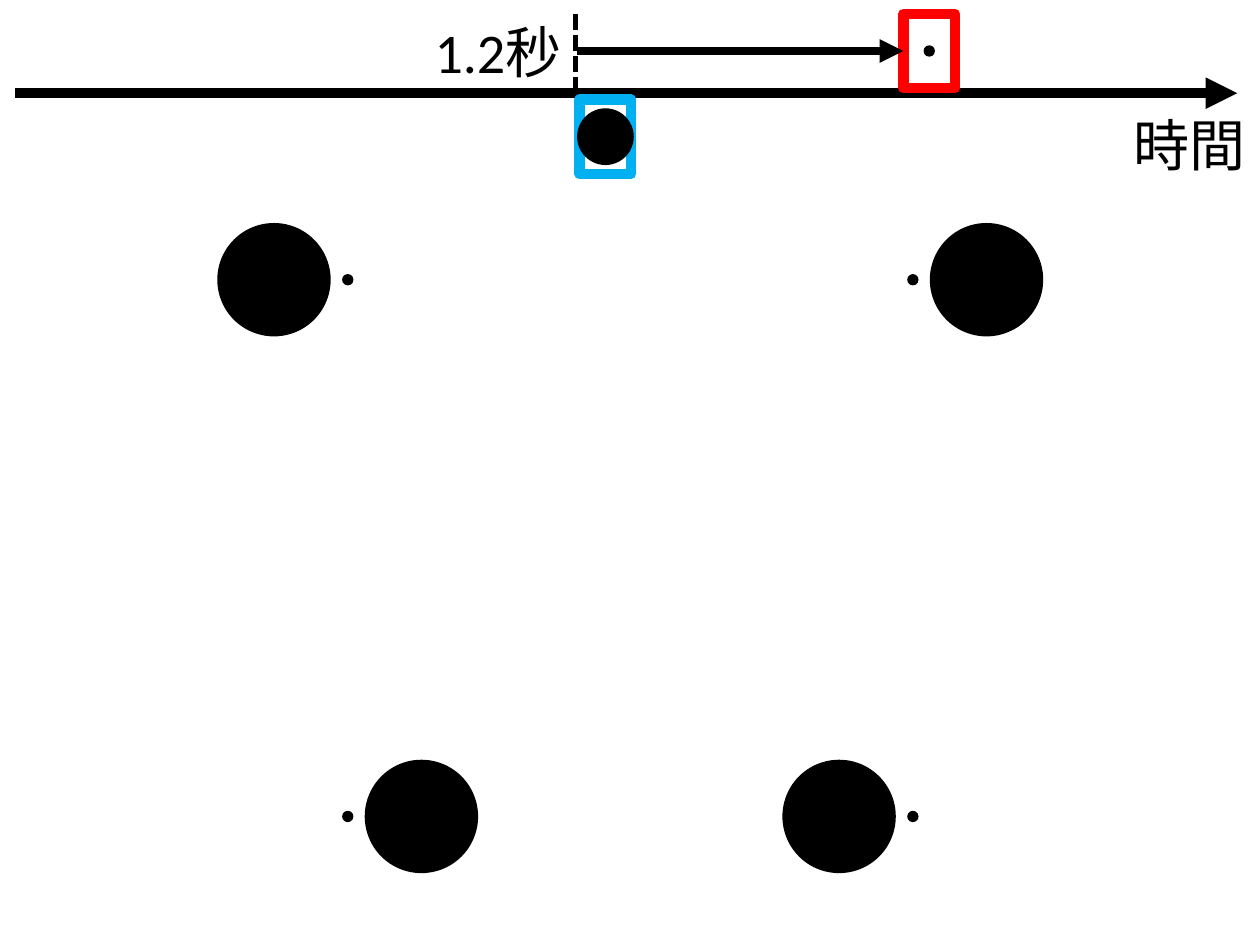
"""Build the slide of a time axis above four pairs of discs and dots."""
from dataclasses import dataclass

from lxml import etree
from pptx import Presentation
from pptx.dml.color import RGBColor
from pptx.enum.dml import MSO_LINE
from pptx.enum.shapes import MSO_CONNECTOR, MSO_SHAPE
from pptx.enum.text import MSO_AUTO_SIZE
from pptx.oxml.ns import qn
from pptx.util import Pt

ELLIPSE, RECTANGLE = MSO_SHAPE.OVAL, MSO_SHAPE.RECTANGLE
STRAIGHT = MSO_CONNECTOR.STRAIGHT
DASH = MSO_LINE.SQUARE_DOT
GROW = MSO_AUTO_SIZE.SHAPE_TO_FIT_TEXT
LEFT_SIDE = 1


@dataclass(frozen=True)
class Theme:
    ink: RGBColor = RGBColor(0, 0, 0)
    start: RGBColor = RGBColor(0, 0xB0, 0xF0)
    target: RGBColor = RGBColor(0xFF, 0, 0)
    font: str = "Calibri"
    label_size: float = 32


def apply(target, values):
    for name, value in values.items():
        setattr(target, name, value)


class SlideBuilder:
    def __init__(self, slide, theme):
        self.slide = slide
        self.theme = theme

    def group(self):
        return self.slide.shapes.add_group_shape()

    def disc(self, group, x, y, diameter):
        corner = (Pt(x - diameter / 2), Pt(y - diameter / 2))
        shape = group.shapes.add_shape(ELLIPSE, *corner, Pt(diameter), Pt(diameter))
        shape.shadow.inherit = False
        shape.fill.solid()
        shape.fill.fore_color.rgb = self.theme.ink
        shape.line.fill.background()

    def frame(self, group, left, top, width, height, color):
        box = [Pt(value) for value in (left, top, width, height)]
        shape = group.shapes.add_shape(RECTANGLE, *box)
        shape.shadow.inherit = False
        shape.fill.background()
        shape.line.color.rgb = color
        shape.line.width = Pt(6)
        return shape

    def line(self, start, end, width, arrow=False, **style):
        points = [Pt(value) for value in (*start, *end)]
        connector = self.slide.shapes.add_connector(STRAIGHT, *points)
        connector.line.color.rgb = self.theme.ink
        apply(connector.line, {"width": Pt(width), **style})
        properties = connector.element.spPr
        if arrow:
            outline = properties.find(qn("a:ln"))
            etree.SubElement(outline, qn("a:tailEnd"), type="triangle")
        etree.SubElement(properties, qn("a:effectLst"))
        return connector

    def label(self, text, left, top, width, height):
        box = [Pt(value) for value in (left, top, width, height)]
        frame = self.slide.shapes.add_textbox(*box).text_frame
        apply(frame, {"word_wrap": False, "auto_size": GROW})
        run = frame.paragraphs[0].add_run()
        run.text = text
        apply(run.font, {"name": self.theme.font, "size": Pt(self.theme.label_size)})
        run.font.color.rgb = self.theme.ink


def main():
    presentation = Presentation()
    apply(presentation, {"slide_width": Pt(720), "slide_height": Pt(540)})
    theme = Theme()
    slide = presentation.slides.add_slide(presentation.slide_layouts[6])
    builder = SlideBuilder(slide, theme)

    disc_size, dot_size, spacing = 64.8, 6.48, 42.12
    left_dot, right_dot, top_row, bottom_row = 198.72, 521.64, 159.84, 466.56
    pairs = [
        (right_dot, top_row, spacing),
        (right_dot, bottom_row, -spacing),
        (left_dot, top_row, -spacing),
        (left_dot, bottom_row, spacing),
    ]
    discs, dots = builder.group(), builder.group()
    for x, y, offset in pairs:
        builder.disc(discs, x + offset, y, disc_size)
        builder.disc(dots, x, y, dot_size)

    axis_y, onset_x, arrow_y = 53.28, 329.04, 29.16
    frame_size = (29.52, 42.48)
    builder.line((8.64, axis_y), (707.04, axis_y), 6, arrow=True)
    builder.label("時間", 640.8, 59.76, 79.2, 46.08)

    disc_marker = builder.group()
    builder.frame(disc_marker, 331.2, 56.88, *frame_size, theme.start)
    builder.disc(disc_marker, 345.96, 78.12, disc_size / 2)
    dot_marker = builder.group()
    target = builder.frame(dot_marker, 516.24, 7.92, *frame_size, theme.target)
    builder.disc(dot_marker, 531, arrow_y, dot_size)

    builder.label("1.2秒", 241.2, 6.48, 87.84, 46.08)
    delay = builder.line((329.76, arrow_y), (516.24, arrow_y), 4.5, arrow=True)
    delay.end_connect(target, LEFT_SIDE)
    builder.line((onset_x, axis_y), (onset_x, 5.76), 3, dash_style=DASH)

    presentation.save("out.pptx")


if __name__ == "__main__":
    main()
